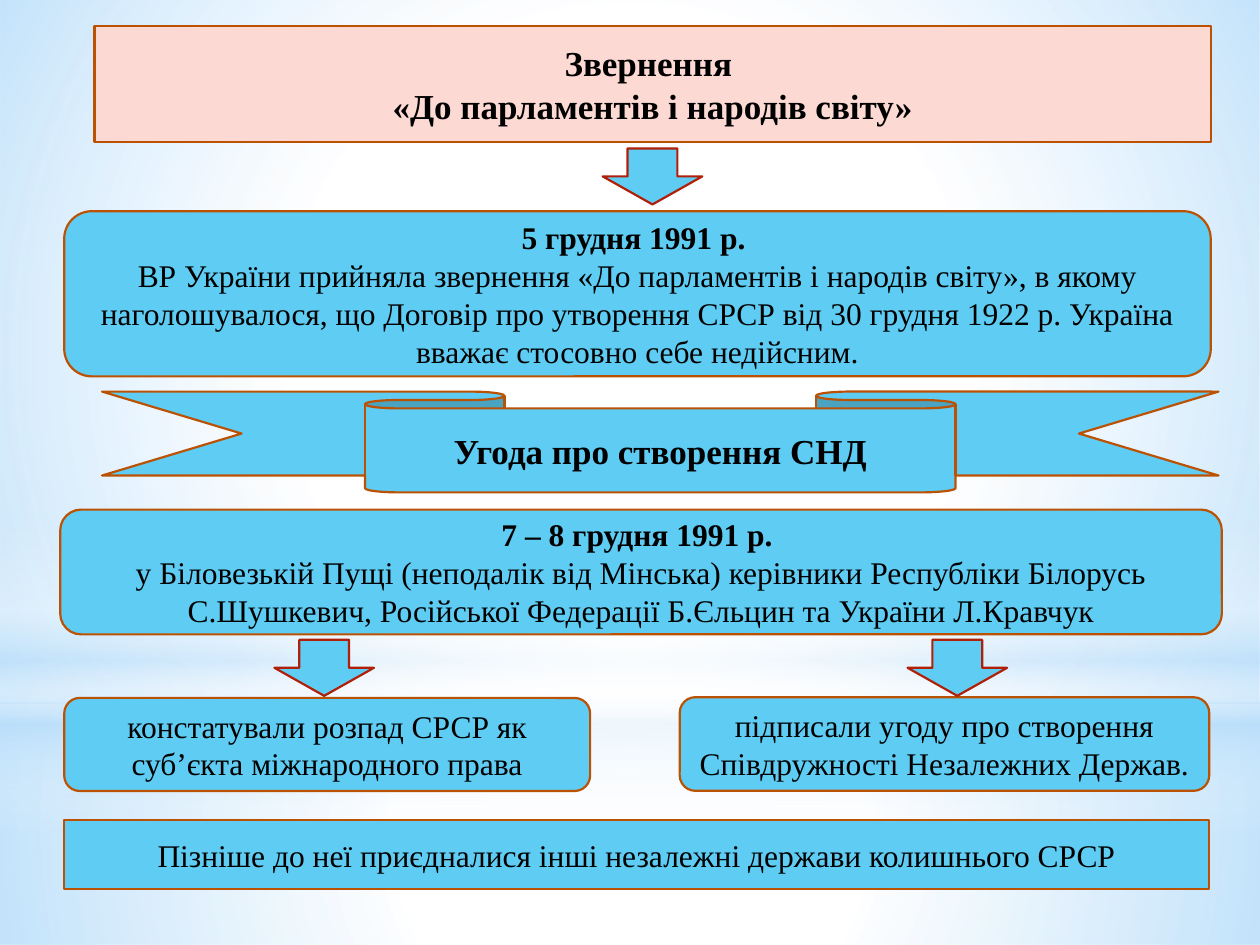
import copy
from dataclasses import dataclass

import pptx
import pptx.dml.color
import pptx.enum.shapes
import pptx.enum.text
import pptx.oxml
import pptx.oxml.ns
import pptx.util

Pt = pptx.util.Pt
RGBColor = pptx.dml.color.RGBColor
Geometry = pptx.enum.shapes.MSO_SHAPE

WHITE = RGBColor(0xFF, 0xFF, 0xFF)
PALE_BLUE = RGBColor(0xB4, 0xDC, 0xFA)
SKY = RGBColor(0x5E, 0xCC, 0xF3)
ROSE = RGBColor(0xFC, 0xD9, 0xD3)
ORANGE = RGBColor(0xBB, 0x52, 0x03)
RED = RGBColor(0xB0, 0x1F, 0x07)
BLACK = RGBColor(0, 0, 0)

RIBBON_ADJUSTMENTS = (0.167, 0.529)
FRAME_FORMAT = {
    "word_wrap": True,
    "auto_size": pptx.enum.text.MSO_AUTO_SIZE.NONE,
    "vertical_anchor": pptx.enum.text.MSO_ANCHOR.MIDDLE,
    "margin_left": Pt(7.2),
    "margin_right": Pt(7.2),
    "margin_top": Pt(3.6),
    "margin_bottom": Pt(3.6),
}
RADIAL = '<a:path path="circle"><a:fillToRect l="50000" t="50000" r="50000" b="50000"/></a:path>'
VERTICAL = '<a:lin ang="5400000" scaled="0"/>'


@dataclass(frozen=True)
class Box:
    left: float
    top: float
    width: float
    height: float

    def in_points(self) -> tuple:
        return tuple(Pt(n) for n in (self.left, self.top, self.width, self.height))


@dataclass(frozen=True)
class Glow:
    box: Box
    geometry: Geometry
    stops: tuple
    direction: str = RADIAL


@dataclass(frozen=True)
class Line:
    text: str
    bold: bool = False
    size: float = 18


@dataclass(frozen=True)
class Block:
    box: Box
    geometry: Geometry
    lines: tuple = ()
    fill: RGBColor = SKY
    outline: RGBColor = ORANGE


GLOWS = (
    Glow(Box(0, 401.76, 720, 138.24), Geometry.RECTANGLE,
         ((0, WHITE, 91), (37, WHITE, 76), (100, PALE_BLUE, 79))),
    Glow(Box(0, 0, 720, 401.76), Geometry.RECTANGLE,
         ((0, WHITE, 89), (48, WHITE, 62), (100, PALE_BLUE, 79))),
    Glow(Box(0, 296.64, 720, 180), Geometry.RECTANGLE,
         ((0, WHITE, 0), (29, WHITE, 30), (45, PALE_BLUE, 40),
          (55, WHITE, 26), (65, PALE_BLUE, 60), (100, WHITE, 0)), VERTICAL),
    Glow(Box(0, 126, 720, 401.76), Geometry.OVAL, ((0, WHITE, 100), (56, WHITE, 0))),
)

APPEAL = Block(
    Box(54, 15, 638, 66), Geometry.DOWN_RIBBON,
    (Line("Звернення ", True, 20), Line("«До парламентів і народів світу»", True, 20)), ROSE)

BLOCKS = (
    Block(Box(36.7, 120.7, 655.2, 94.4), Geometry.ROUNDED_RECTANGLE,
          (Line("5 грудня 1991 р. ", True),
           Line("ВР України прийняла звернення «До парламентів і народів світу», в якому "
                "наголошувалося, що Договір про утворення СРСР від 30 грудня 1922 р. "
                "Україна вважає стосовно себе недійсним."))),
    Block(Box(58.3, 223.8, 638, 57.6), Geometry.DOWN_RIBBON,
          (Line("Угода про створення СНД", True, 20),)),
    Block(Box(34.4, 291.2, 663.8, 71.3), Geometry.ROUNDED_RECTANGLE,
          (Line("7 – 8 грудня 1991 р. ", True),
           Line("у Біловезькій Пущі (неподалік від Мінська) керівники Республіки Білорусь "
                "С.Шушкевич, Російської Федерації Б.Єльцин та України Л.Кравчук"))),
    Block(Box(36.7, 398.8, 300.5, 53.2), Geometry.ROUNDED_RECTANGLE,
          (Line("констатували розпад СРСР як суб’єкта міжнародного права"),)),
    Block(Box(388.4, 398.4, 302.6, 53.5), Geometry.ROUNDED_RECTANGLE,
          (Line("підписали угоду про створення Співдружності Незалежних Держав."),)),
    Block(Box(36.7, 468.6, 654.2, 39.4), Geometry.RECTANGLE,
          (Line("Пізніше до неї приєдналися інші незалежні держави колишнього СРСР"),)),
) + tuple(
    Block(Box(left, top, 56.9, 32), Geometry.DOWN_ARROW, outline=RED)
    for left, top in ((344.4, 84.8), (518.6, 365.6), (156.8, 365.6))
)


def draw_glow(shapes, glow: Glow) -> None:
    band = shapes.add_shape(glow.geometry, *glow.box.in_points())
    band.shadow.inherit = False
    band.line.fill.background()
    band.fill.background()
    stops = "".join(
        f'<a:gs pos="{place * 1000}"><a:srgbClr val="{color}">'
        f'<a:alpha val="{opacity * 1000}"/></a:srgbClr></a:gs>'
        for place, color, opacity in glow.stops)
    gradient = pptx.oxml.parse_xml(
        f'<a:gradFill {pptx.oxml.ns.nsdecls("a")} rotWithShape="1">'
        f'<a:gsLst>{stops}</a:gsLst>{glow.direction}</a:gradFill>')
    properties = band._element.spPr
    properties.replace(properties.find(pptx.oxml.ns.qn("a:noFill")), gradient)


def format_block(shape, block: Block) -> None:
    shape.shadow.inherit = False
    shape.fill.solid()
    shape.fill.fore_color.rgb = block.fill
    shape.line.color.rgb = block.outline
    shape.line.width = Pt(1.25)
    if block.geometry == Geometry.DOWN_RIBBON:
        for index, adjustment in enumerate(RIBBON_ADJUSTMENTS):
            shape.adjustments[index] = adjustment
    frame = shape.text_frame
    for name, value in FRAME_FORMAT.items():
        setattr(frame, name, value)
    for index, line in enumerate(block.lines):
        paragraph = frame.paragraphs[0] if index == 0 else frame.add_paragraph()
        paragraph.alignment = pptx.enum.text.PP_ALIGN.CENTER
        run = paragraph.add_run()
        run.text = line.text
        run.font.color.rgb = BLACK
        font_format = {"name": "Times New Roman", "size": Pt(line.size), "bold": line.bold}
        for name, value in font_format.items():
            setattr(run.font, name, value)


def draw_block(shapes, block: Block):
    shape = shapes.add_shape(block.geometry, *block.box.in_points())
    format_block(shape, block)
    return shape


def draw_title(shapes, block: Block, ribbon) -> None:
    title = shapes.title
    for name, value in zip(("left", "top", "width", "height"), block.box.in_points()):
        setattr(title, name, value)
    outline = copy.deepcopy(ribbon._element.spPr.prstGeom)
    title._element.spPr.find(pptx.oxml.ns.qn("a:xfrm")).addnext(outline)
    format_block(title, block)
    shapes._spTree.append(title._element)


def main() -> None:
    presentation = pptx.Presentation()
    presentation.slide_width, presentation.slide_height = Pt(720), Pt(540)
    shapes = presentation.slides.add_slide(presentation.slide_layouts[5]).shapes
    for glow in GLOWS:
        draw_glow(shapes, glow)
    drawn = [draw_block(shapes, block) for block in BLOCKS]
    ribbon = next(s for s in drawn if s.auto_shape_type == Geometry.DOWN_RIBBON)
    draw_title(shapes, APPEAL, ribbon)
    presentation.save("out.pptx")


if __name__ == "__main__":
    main()
